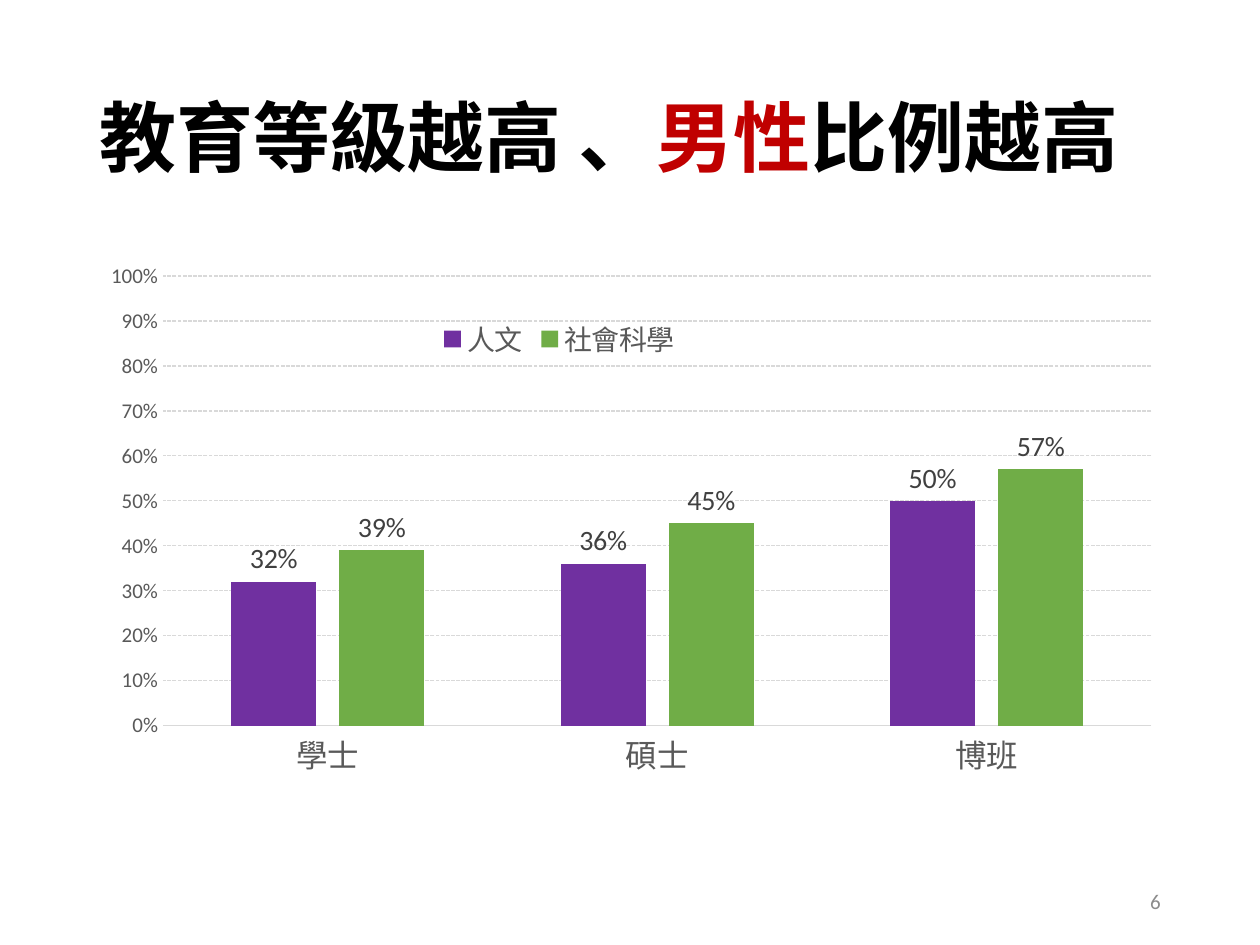
from dataclasses import dataclass

from lxml.etree import SubElement
from pptx import Presentation
from pptx.chart.data import CategoryChartData
from pptx.dml.color import RGBColor
from pptx.enum.chart import XL_CHART_TYPE, XL_LABEL_POSITION, XL_LEGEND_POSITION, XL_TICK_MARK
from pptx.enum.dml import MSO_LINE
from pptx.enum.text import MSO_ANCHOR, PP_ALIGN
from pptx.oxml.ns import qn
from pptx.util import Pt

COLORS = {
    "black": "000000",
    "red": "C00000",
    "purple": "7030A0",
    "green": "70AD47",
    "label": "404040",
    "axis": "595959",
    "number": "8C8C8C",
    "grid": "D9D9D9",
}
LATIN = "Calibri"
CHINESE = "Noto Sans CJK SC"
MARGIN = 49.68
CONTENT_WIDTH = 620.64


@dataclass
class Frame:
    left: float
    top: float
    width: float
    height: float

    def lengths(self) -> list:
        return [Pt(value) for value in (self.left, self.top, self.width, self.height)]


@dataclass
class Span:
    text: str
    color: str


@dataclass
class Series:
    name: str
    values: tuple
    color: str


TITLE = [Span("教育等級越高 、", "black"), Span("男性", "red"), Span("比例越高", "black")]
DEGREES = ["學士", "碩士", "博班"]
SERIES = [
    Series("人文", (0.32, 0.36, 0.5), "purple"),
    Series("社會科學", (0.39, 0.45, 0.57), "green"),
]


def color(name: str) -> RGBColor:
    return RGBColor.from_string(COLORS[name])


def style_font(font, size: float, color_name: str, face: str, bold: bool = False) -> None:
    font.size = Pt(size)
    font.name = face
    font.bold = bold
    font.color.rgb = color(color_name)


def use_face_for_chinese(element) -> None:
    for latin in list(element.iter(qn("a:latin"))):
        east_asian = SubElement(latin.getparent(), qn("a:ea"))
        east_asian.set("typeface", latin.get("typeface"))
        latin.addnext(east_asian)


def add_box(page, frame: Frame):
    box = page.shapes.add_textbox(*frame.lengths())
    box.text_frame.word_wrap = True
    box.text_frame.vertical_anchor = MSO_ANCHOR.MIDDLE
    return box


def add_title(page, frame: Frame) -> None:
    box = add_box(page, frame)
    para = box.text_frame.paragraphs[0]
    para.line_spacing = 0.9
    for span in TITLE:
        run = para.add_run()
        run.text = span.text
        style_font(run.font, 44, span.color, CHINESE, bold=True)
    use_face_for_chinese(box.element)


def add_page_number(page, frame: Frame, number: str) -> None:
    para = add_box(page, frame).text_frame.paragraphs[0]
    para.text = number
    para.alignment = PP_ALIGN.RIGHT
    style_font(para.font, 12, "number", LATIN)


def place(element, **fractions: float) -> None:
    for old in element.findall(qn("c:layout")):
        element.remove(old)
    layout = SubElement(element, qn("c:layout"))
    manual = SubElement(layout, qn("c:manualLayout"))
    if element.tag == qn("c:plotArea"):
        SubElement(manual, qn("c:layoutTarget")).set("val", "inner")
        element.insert(0, layout)
    else:
        element.find(qn("c:legendPos")).addnext(layout)
    for mode in ("xMode", "yMode"):
        SubElement(manual, qn(f"c:{mode}")).set("val", "edge")
    for name, value in fractions.items():
        SubElement(manual, qn(f"c:{name}")).set("val", str(value))


def style_axes(chart) -> None:
    for axis in (chart.category_axis, chart.value_axis):
        axis.major_tick_mark = XL_TICK_MARK.NONE
        axis.minor_tick_mark = XL_TICK_MARK.NONE
    degrees, share = chart.category_axis, chart.value_axis
    style_font(degrees.tick_labels.font, 18, "axis", CHINESE)
    style_font(share.tick_labels.font, 12, "axis", LATIN)
    share.minimum_scale, share.maximum_scale, share.major_unit = 0, 1, 0.1
    share.tick_labels.number_format = "0%"
    share.tick_labels.number_format_is_linked = False
    share.format.line.fill.background()
    for line in (degrees.format.line, share.major_gridlines.format.line):
        line.color.rgb = color("grid")
        line.width = Pt(0.75)
    share.major_gridlines.format.line.dash_style = MSO_LINE.SQUARE_DOT


def style_columns(plot) -> None:
    plot.gap_width = 160
    plot.overlap = -27
    plot.vary_by_categories = False
    for columns, series in zip(plot.series, SERIES):
        columns.format.fill.solid()
        columns.format.fill.fore_color.rgb = color(series.color)
        labels = columns.data_labels
        labels.show_value = True
        labels.number_format = "0%"
        labels.number_format_is_linked = False
        labels.position = XL_LABEL_POSITION.OUTSIDE_END
        style_font(labels.font, 16, "label", LATIN)


def add_share_chart(page, frame: Frame) -> None:
    data = CategoryChartData(number_format="0%")
    data.categories = DEGREES
    for series in SERIES:
        data.add_series(series.name, series.values)
    chart = page.shapes.add_chart(
        XL_CHART_TYPE.COLUMN_CLUSTERED, *frame.lengths(), data
    ).chart
    chart.has_title = False
    style_font(chart.font, 10, "black", LATIN)
    style_axes(chart)
    style_columns(chart.plots[0])
    chart.has_legend = True
    chart.legend.position = XL_LEGEND_POSITION.BOTTOM
    chart.legend.include_in_layout = False
    style_font(chart.legend.font, 16, "axis", CHINESE)
    root = chart.element
    place(next(root.iter(qn("c:plotArea"))), x=0.07, y=0.04, w=0.91, h=0.75)
    place(next(root.iter(qn("c:legend"))), x=0.32, y=0.11, w=0.23, h=0.07)
    use_face_for_chinese(root)


def main() -> None:
    deck = Presentation()
    deck.slide_width, deck.slide_height = Pt(720), Pt(540)
    page = deck.slides.add_slide(deck.slide_layouts[6])
    add_title(page, Frame(MARGIN, 28.8, CONTENT_WIDTH, 104.4))
    add_share_chart(page, Frame(MARGIN, 144, CONTENT_WIDTH, 342.72))
    number_width = 162
    number_left = MARGIN + CONTENT_WIDTH - number_width
    add_page_number(page, Frame(number_left, 500.4, number_width, 28.8), "6")
    deck.save("out.pptx")


if __name__ == "__main__":
    main()
